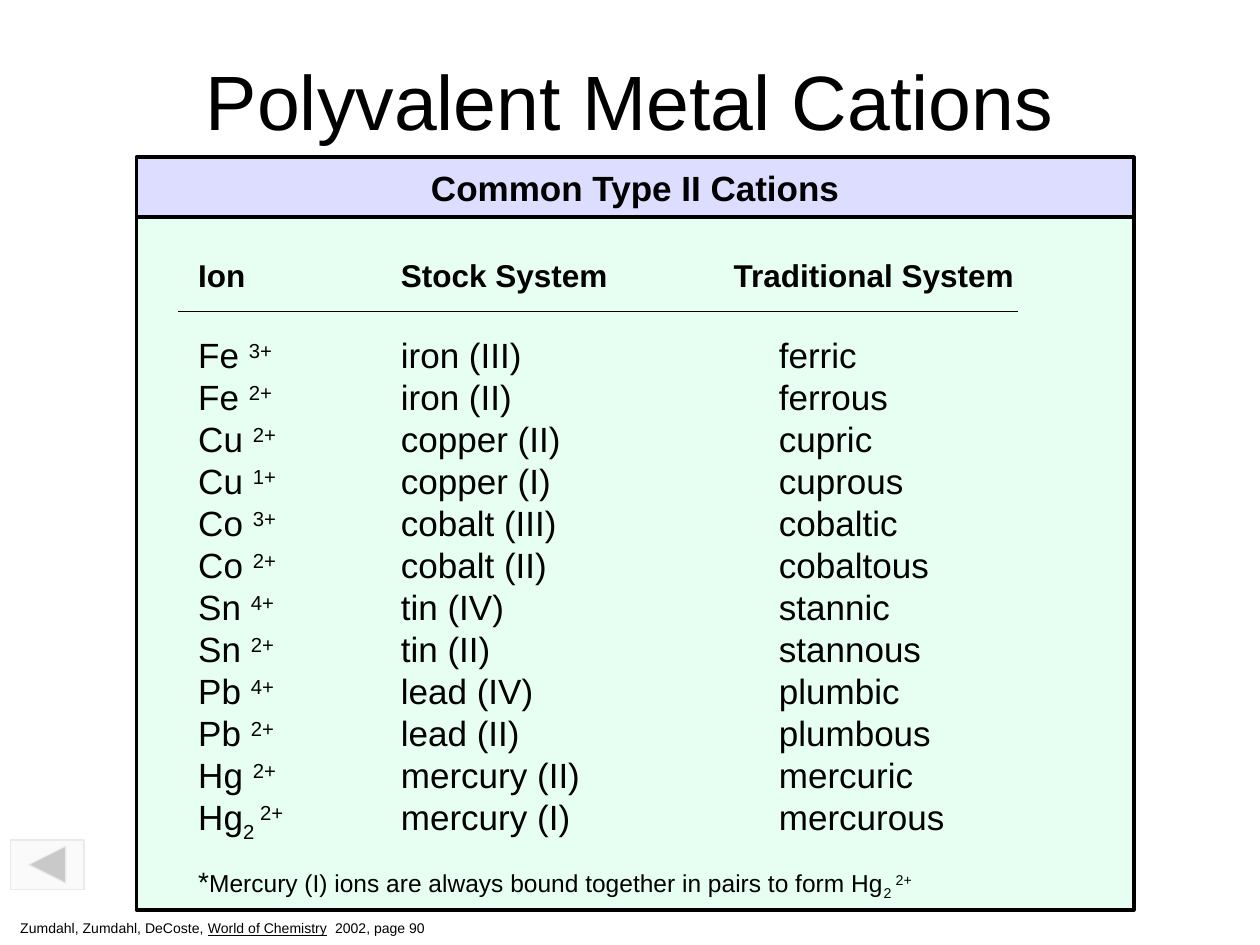
from pptx import Presentation
from pptx.dml.color import RGBColor
from pptx.enum.shapes import MSO_CONNECTOR, MSO_SHAPE as Shape
from pptx.enum.text import MSO_ANCHOR as Anchor, PP_ALIGN as Align
from pptx.oxml.ns import qn
from pptx.util import Inches, Pt
from lxml.etree import SubElement

BLACK = RGBColor(0x00, 0x00, 0x00)
LAVENDER = RGBColor(0xDD, 0xDD, 0xFF)
MINT = RGBColor(0xD1, 0xFF, 0xE8)
PALE_GREY = RGBColor(0xF7, 0xF7, 0xF7)
EDGE_GREY = RGBColor(0xEA, 0xEA, 0xEA)

WIDTH, HEIGHT = Inches(10), Inches(7.5)
CELL = WIDTH // 120
SUPER, SUB = 30000, -25000

CATIONS = [
    ("Fe", "", "3+", "iron (III)", "ferric"),
    ("Fe", "", "2+", "iron (II)", "ferrous"),
    ("Cu", "", "2+", "copper (II)", "cupric"),
    ("Cu", "", "1+", "copper (I)", "cuprous"),
    ("Co", "", "3+", "cobalt (III)", "cobaltic"),
    ("Co", "", "2+", "cobalt (II)", "cobaltous"),
    ("Sn", "", "4+", "tin (IV)", "stannic"),
    ("Sn", "", "2+", "tin (II)", "stannous"),
    ("Pb", "", "4+", "lead (IV)", "plumbic"),
    ("Pb", "", "2+", "lead (II)", "plumbous"),
    ("Hg", "", "2+", "mercury (II)", "mercuric"),
    ("Hg", "2", "2+", "mercury (I)", "mercurous"),
]


def grid(*cells):
    """Turn counts of grid cells into lengths."""
    return [round(count * CELL) for count in cells]


def write(paragraph, text, size=20, bold=False, underline=False, baseline=0):
    """Append formatted text to a paragraph."""
    run = paragraph.add_run()
    run.text = text
    font = run.font
    font.name, font.size, font.bold = "Arial", Pt(size), bold
    font.underline = underline
    font.color.rgb = BLACK
    if baseline:
        run._r.get_or_add_rPr().set("baseline", str(baseline))


def add_tabs(paragraph, *stops):
    """Set left tab stops, given in grid columns."""
    tabs = SubElement(paragraph._p.get_or_add_pPr(), qn("a:tabLst"))
    for stop in grid(*stops):
        SubElement(tabs, qn("a:tab"), pos=str(stop), algn="l")


def add_box(slide, place, kind, fill, edge, weight, alpha=None):
    """Draw a filled and outlined preset shape."""
    box = slide.shapes.add_shape(kind, *grid(*place))
    box.shadow.inherit = False
    box.fill.solid()
    box.fill.fore_color.rgb = fill
    box.line.color.rgb = edge
    box.line.width = Pt(weight)
    if alpha:
        colour = box._element.spPr.find(qn("a:solidFill"))[0]
        SubElement(colour, qn("a:alpha"), val=str(alpha * 1000))
    return box


def add_label(slide, place, wrap=True):
    """Add a vertically centred text box and return its first paragraph."""
    frame = slide.shapes.add_textbox(*grid(*place)).text_frame
    frame.word_wrap = wrap
    frame.vertical_anchor = Anchor.MIDDLE
    return frame.paragraphs[0]


def add_rule(slide, left, right, row):
    """Draw a thin horizontal line."""
    left, right, row = grid(left, right, row)
    rule = slide.shapes.add_connector(MSO_CONNECTOR.STRAIGHT, left, row, right, row)
    rule.line.color.rgb = BLACK
    rule.line.width = Pt(0.75)
    SubElement(rule._element.spPr, qn("a:effectLst"))


def fill_panel(frame):
    """Write the column heads, the cations and the footnote."""
    frame.word_wrap = True
    frame.vertical_anchor = Anchor.TOP
    frame.margin_left, frame.margin_top = Inches(0.49), Inches(0.31)

    heads = frame.paragraphs[0]
    heads.alignment = Align.LEFT
    add_tabs(heads, 19.3, 51)
    write(heads, "Ion\tStock System\tTraditional System", size=18, bold=True)

    for index, (metal, count, charge, stock, traditional) in enumerate(CATIONS):
        row = frame.add_paragraph()
        row.alignment = Align.LEFT
        row.space_before = Pt(0 if index else 23)
        add_tabs(row, 19.3, 55.3)
        write(row, metal if count else metal + " ")
        if count:
            write(row, count + " ", baseline=SUB)
        write(row, charge, baseline=SUPER)
        write(row, f"\t{stock}\t{traditional}")

    note = frame.add_paragraph()
    note.alignment = Align.LEFT
    note.space_before = Pt(12)
    write(note, "*", size=16)
    write(note, "Mercury (I) ions are always bound together in pairs to form Hg", size=14)
    write(note, "2 ", size=14, baseline=SUB)
    write(note, "2+", size=14, baseline=SUPER)


def main():
    """Build the slide and save it."""
    deck = Presentation()
    deck.slide_width, deck.slide_height = WIDTH, HEIGHT
    slide = deck.slides.add_slide(deck.slide_layouts[6])

    title = add_label(slide, (9, 2, 102, 15))
    title.alignment = Align.CENTER
    write(title, "Polyvalent Metal Cations", size=44)

    banner = add_box(slide, (13, 15, 95, 5.64), Shape.RECTANGLE, LAVENDER, BLACK, 2.25)
    caption = banner.text_frame.paragraphs[0]
    caption.alignment = Align.CENTER
    write(caption, "Common Type II Cations", bold=True)

    panel = add_box(slide, (13, 20.64, 95, 66), Shape.RECTANGLE, MINT, BLACK, 2.25, alpha=50)
    fill_panel(panel.text_frame)
    add_rule(slide, 17, 97, 29.64)

    citation = add_label(slide, (0.75, 87, 41, 2.8), wrap=False)
    write(citation, "Zumdahl, Zumdahl, DeCoste, ", size=8)
    write(citation, "World of Chemistry", size=8, underline=True)
    write(citation, "  2002, page 90", size=8)

    add_box(slide, (1, 80, 7, 4.7), Shape.ACTION_BUTTON_BACK_OR_PREVIOUS,
            PALE_GREY, EDGE_GREY, 0.75, alpha=50)
    deck.save("out.pptx")


if __name__ == "__main__":
    main()
